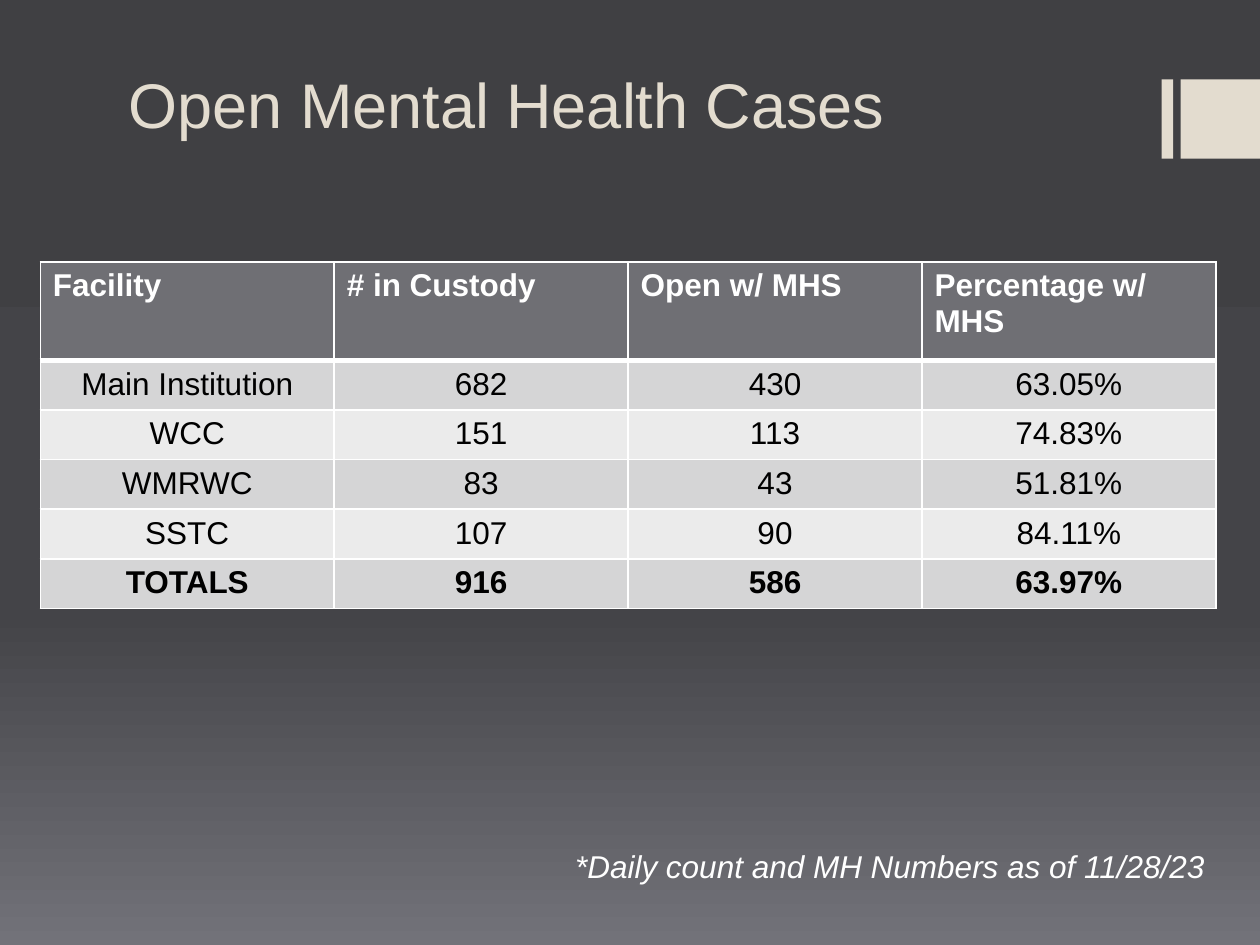
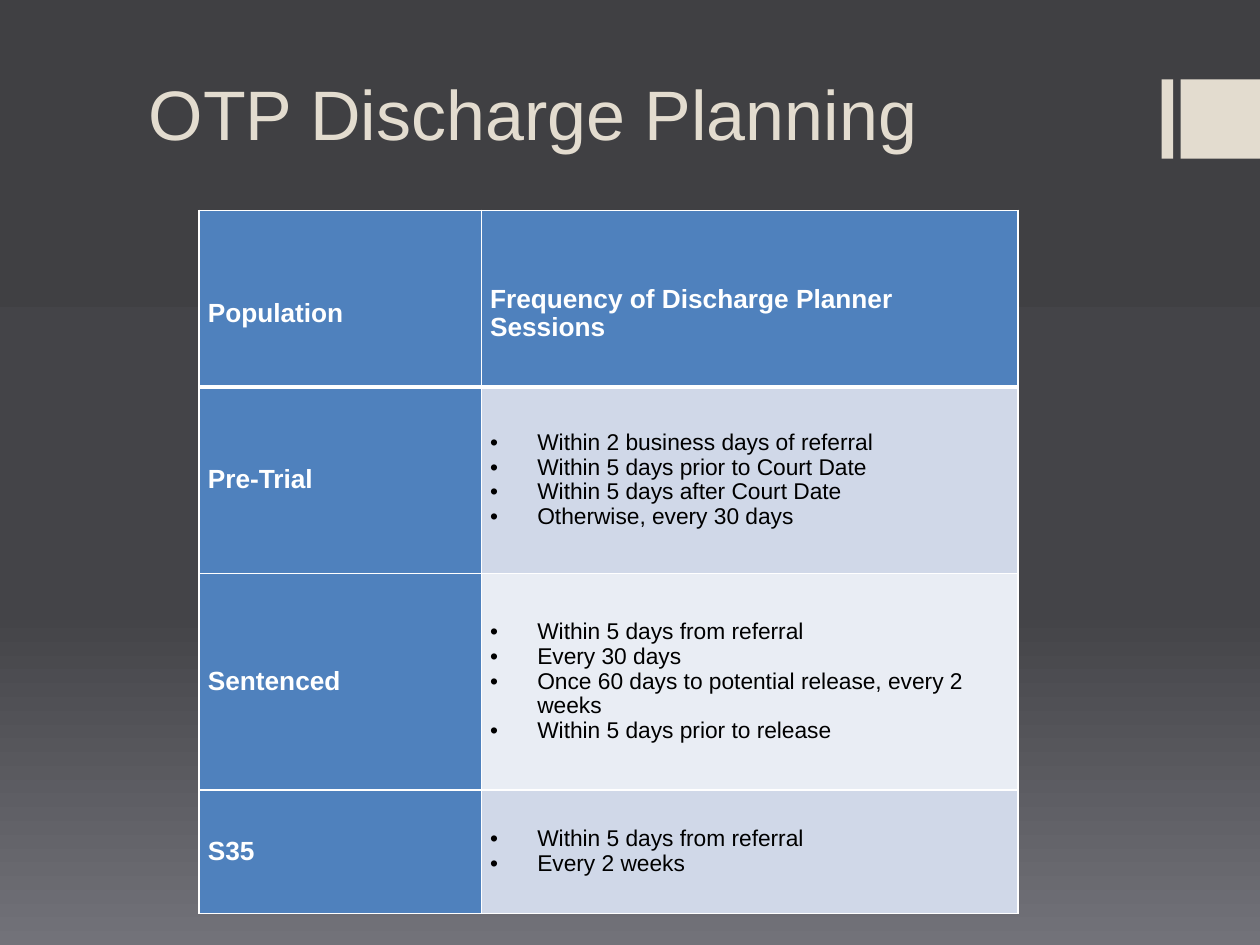
"""Builds two slides on mental health cases and discharge planning."""
from dataclasses import dataclass, field

from pptx import Presentation
from pptx import util as u
from pptx.dml.color import RGBColor
from pptx.enum import shapes, text
from pptx.oxml import parse_xml
from pptx.oxml.ns import nsdecls, qn


@dataclass(frozen=True)
class Theme:
    """Colours, font and type sizes of the deck."""
    font: str = "Arial"
    sand: str = "E3DCCF"
    white: str = "FFFFFF"
    black: str = "000000"
    grey_head: str = "6F6F74"
    grey_bands: tuple[str, str] = ("D5D5D6", "EBEBEB")
    blue_head: str = "4F81BD"
    blue_bands: tuple[str, str] = ("D0D8E8", "E9EDF4")
    backdrop: tuple[tuple[int, str], ...] = ((0, "404043"), (65, "444448"), (100, "727279"))
    title: int = 36
    title_large: int = 40
    body: int = 18
    label: int = 15
    bullet: int = 13


@dataclass(frozen=True)
class Box:
    """A frame on a grid of 100 columns by 75 rows."""
    col: float
    row: float
    cols: float
    rows: float

    def emu(self) -> tuple[int, int, int, int]:
        """Return left, top, width and height in EMU."""
        return across(self.col), down(self.row), across(self.cols), down(self.rows)


@dataclass(frozen=True)
class CellStyle:
    """Look of one table cell."""
    fill: str
    font: dict
    rule_above: int = 1
    rule_below: int = 1
    anchor: text.MSO_ANCHOR = text.MSO_ANCHOR.TOP
    margins: tuple[float, float, float] = (1, 0.5, 0.5)
    bullets: bool = False
    paragraph: dict = field(default_factory=dict)


THEME = Theme()
WIDTH, HEIGHT = u.Inches(10), u.Inches(7.5)
MARKERS = (Box(92.2, 6.3, 0.9, 6.3), Box(93.7, 6.3, 6.3, 6.3))
HANGING = 3.75

CASES = (
    ("Facility", "# in Custody", "Open w/ MHS", "Percentage w/ MHS"),
    ("Main Institution", "682", "430", "63.05%"),
    ("WCC", "151", "113", "74.83%"),
    ("WMRWC", "83", "43", "51.81%"),
    ("SSTC", "107", "90", "84.11%"),
    ("TOTALS", "916", "586", "63.97%"),
)
SESSIONS = (
    ("Population", "Frequency of Discharge Planner Sessions"),
    ("Pre-Trial", "Within 2 business days of referral\nWithin 5 days prior to Court Date\n"
                  "Within 5 days after Court Date\nOtherwise, every 30 days"),
    ("Sentenced", "Within 5 days from referral\nEvery 30 days\n"
                  "Once 60 days to potential release, every 2 weeks\n"
                  "Within 5 days prior to release"),
    ("S35", "Within 5 days from referral\nEvery 2 weeks"),
)


def across(cols: float) -> int:
    """Convert grid columns to EMU."""
    return round(WIDTH * cols / 100)


def down(rows: float) -> int:
    """Convert grid rows to EMU."""
    return round(HEIGHT * rows / 75)


def write(tf, content: str, *, size: float, color: str, bold: bool = False,
          italic: bool = False, align=text.PP_ALIGN.LEFT, spacing: float = 1.0) -> None:
    """Write one paragraph per line of content with the given format."""
    for i, line in enumerate(content.split("\n")):
        p = tf.add_paragraph() if i else tf.paragraphs[0]
        p.alignment, p.line_spacing = align, spacing
        r = p.add_run()
        r.text = line
        f = r.font
        f.name, f.size, f.bold, f.italic = THEME.font, u.Pt(size), bold, italic
        f.color.rgb = RGBColor.from_string(color)


def paint_backdrop(master) -> None:
    """Give the master a vertical gradient background."""
    fill = master.background.fill
    fill.gradient()
    fill.gradient_angle = 270
    stops = master.element.find(".//" + qn("a:gsLst"))
    for old in list(stops):
        stops.remove(old)
    for share, color in THEME.backdrop:
        stops.append(parse_xml(f'<a:gs {nsdecls("a")} pos="{share * 1000}">'
                               f'<a:srgbClr val="{color}"/></a:gs>'))


def add_titled_slide(prs, title: str, box: Box, size: int, bottom_inset: float = 0.5):
    """Add a slide with corner markers and a formatted title."""
    s = prs.slides.add_slide(prs.slide_layouts[5])
    for marker in MARKERS:
        sp = s.shapes.add_shape(shapes.MSO_SHAPE.RECTANGLE, *marker.emu())
        sp.shadow.inherit = False
        sp.fill.solid()
        sp.fill.fore_color.rgb = RGBColor.from_string(THEME.sand)
        sp.line.fill.background()
    sp = s.shapes.title
    sp.left, sp.top, sp.width, sp.height = box.emu()
    tf = sp.text_frame
    tf.auto_size, tf.word_wrap = text.MSO_AUTO_SIZE.NONE, True
    tf.vertical_anchor = text.MSO_ANCHOR.BOTTOM
    tf.margin_bottom = down(bottom_inset)
    write(tf, title, size=size, color=THEME.sand)
    return s


def rule_cell(cell, above: int, below: int) -> None:
    """Draw white borders around a cell."""
    pr = cell._tc.get_or_add_tcPr()
    for side, points in (("L", 1), ("R", 1), ("T", above), ("B", below)):
        pr.append(parse_xml(
            f'<a:ln{side} {nsdecls("a")} w="{u.Pt(points)}"><a:solidFill>'
            f'<a:srgbClr val="{THEME.white}"/></a:solidFill></a:ln{side}>'))


def add_bullet(p) -> None:
    """Give a paragraph a hanging round bullet."""
    pr = p._p.get_or_add_pPr()
    pr.set("marL", str(across(HANGING)))
    pr.set("indent", str(-across(HANGING)))
    pr.append(parse_xml(f'<a:buFont {nsdecls("a")} typeface="{THEME.font}"/>'))
    pr.append(parse_xml(f'<a:buChar {nsdecls("a")} char="•"/>'))


def fill_cell(cell, content: str, style: CellStyle) -> None:
    """Write and format one table cell."""
    rule_cell(cell, style.rule_above, style.rule_below)
    cell.fill.solid()
    cell.fill.fore_color.rgb = RGBColor.from_string(style.fill)
    side, top, bottom = style.margins
    cell.margin_left = cell.margin_right = across(side)
    cell.margin_top, cell.margin_bottom = down(top), down(bottom)
    cell.vertical_anchor = style.anchor
    write(cell.text_frame, content, **style.font, **style.paragraph)
    if style.bullets:
        for p in cell.text_frame.paragraphs:
            add_bullet(p)


def add_grid(s, box: Box, rows, widths, heights, style_of) -> None:
    """Add a table whose cell styles come from style_of(row, column)."""
    table = s.shapes.add_table(len(rows), len(widths), *box.emu()).table
    table.first_row = table.horz_banding = False
    for column, width in zip(table.columns, widths):
        column.width = across(width)
    for r, (row, height) in enumerate(zip(rows, heights)):
        table.rows[r].height = down(height)
        for c, content in enumerate(row):
            fill_cell(table.cell(r, c), content, style_of(r, c))


def case_style(row: int, col: int) -> CellStyle:
    """Return the style of a cell in the cases table."""
    if row == 0:
        return CellStyle(THEME.grey_head, rule_below=3,
                         font=dict(size=THEME.body, color=THEME.white, bold=True))
    return CellStyle(THEME.grey_bands[(row - 1) % 2], rule_above=3 if row == 1 else 1,
                     font=dict(size=THEME.body, color=THEME.black, bold=row == len(CASES) - 1),
                     paragraph=dict(align=text.PP_ALIGN.CENTER))


def session_style(row: int, col: int) -> CellStyle:
    """Return the style of a cell in the sessions table."""
    label = row == 0 or col == 0
    font = (dict(size=THEME.label, color=THEME.white, bold=True) if label
            else dict(size=THEME.bullet, color=THEME.black))
    return CellStyle(THEME.blue_head if label else THEME.blue_bands[(row - 1) % 2], font,
                     rule_above=3 if row == 1 else 1, rule_below=3 if row == 0 else 1,
                     anchor=text.MSO_ANCHOR.MIDDLE, bullets=not label,
                     margins=(0.7, 0 if row else 2.4, 0), paragraph=dict(spacing=0.97))


def add_cases_slide(prs) -> None:
    """Add the slide of open cases per facility."""
    s = add_titled_slide(prs, "Open Mental Health Cases", Box(9.2, 5, 80, 12.6),
                         THEME.title, bottom_inset=6.4)
    add_grid(s, Box(3.2, 20.8, 93.3, 27.5), CASES, [93.3 / 4] * 4,
             [7.8] + [3.94] * 5, case_style)
    tf = s.shapes.add_textbox(*Box(15.8, 66.7, 80.8, 4).emu()).text_frame
    tf.word_wrap = True
    write(tf, "*Daily count and MH Numbers as of 11/28/23", size=THEME.body,
          color=THEME.white, italic=True, align=text.PP_ALIGN.RIGHT)


def add_sessions_slide(prs) -> None:
    """Add the slide of discharge planner sessions."""
    s = add_titled_slide(prs, "OTP Discharge Planning", Box(10.8, 5, 80, 7.8),
                         THEME.title_large)
    add_grid(s, Box(15.8, 16.7, 65, 55.8), SESSIONS, [22.4, 42.6],
             [14, 14.8, 17.2, 9.8], session_style)


def main() -> None:
    """Build and save the deck."""
    prs = Presentation()
    prs.slide_width, prs.slide_height = WIDTH, HEIGHT
    paint_backdrop(prs.slide_master)
    add_cases_slide(prs)
    add_sessions_slide(prs)
    prs.save("out.pptx")


if __name__ == "__main__":
    main()
